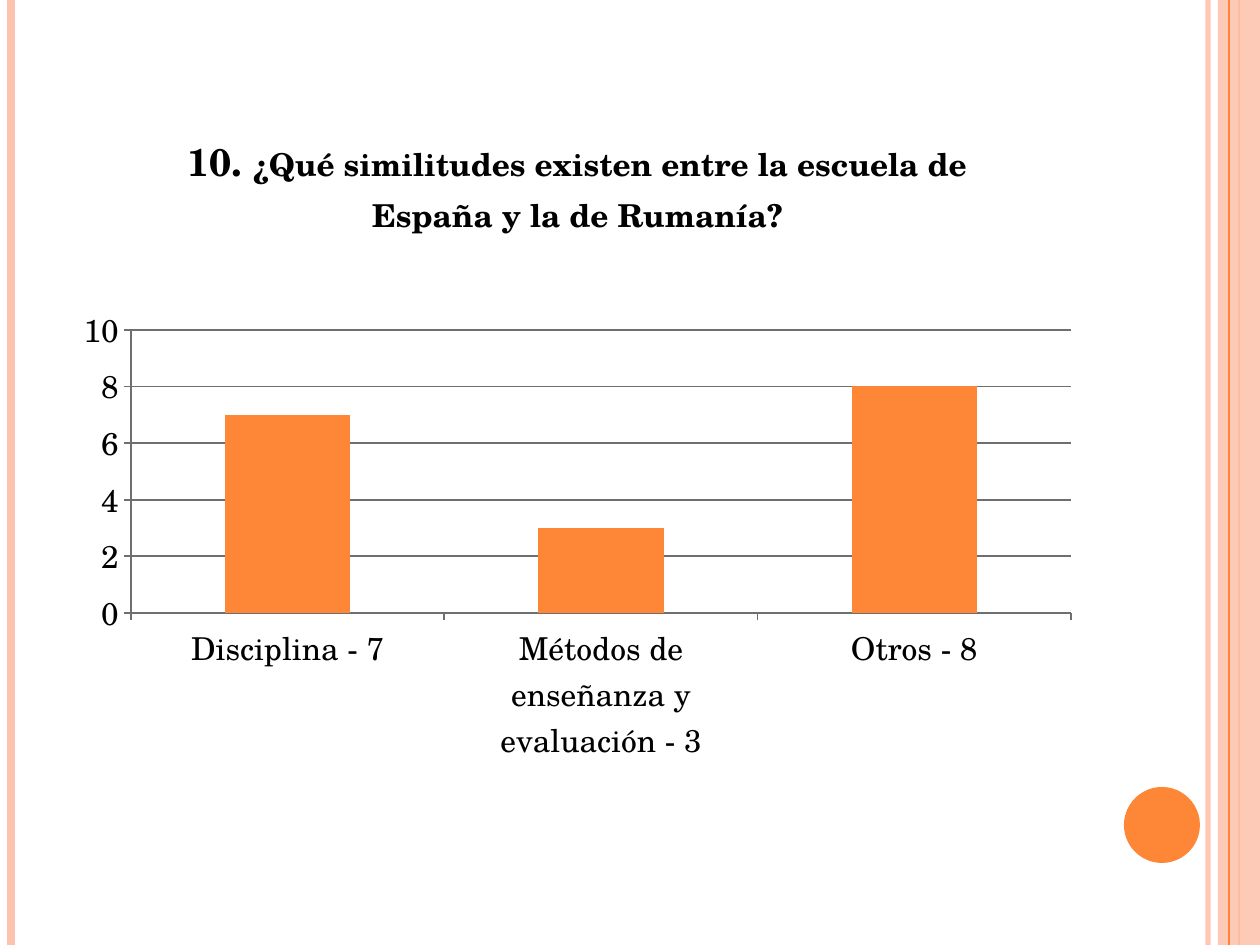
from typing import NamedTuple

from lxml.etree import SubElement
from pptx import Presentation
from pptx.chart.data import CategoryChartData
from pptx.dml.color import RGBColor
from pptx.enum.chart import XL_CHART_TYPE as ChartType, XL_TICK_MARK as Tick
from pptx.enum.shapes import MSO_CONNECTOR as Connector, MSO_SHAPE as Shape
from pptx.oxml import parse_xml
from pptx.oxml.ns import nsdecls, qn
from pptx.util import Emu, Pt

PX_PER_INCH = 126
WIDTH, HEIGHT = 1260, 945
FONT = "TeX Gyre Schola"
ORANGE, PEACH, BLACK, GRAY = "FE8637", "FEC3AE", "000000", "6F6F6F"


class Stripe(NamedTuple):
    x: int
    color: str
    weight: float
    opacity: int = 100


class Block(NamedTuple):
    kind: Shape
    x: int
    y: int
    width: int
    height: int
    color: str
    opacity: int = 100


class Box(NamedTuple):
    x: int
    y: int
    width: int
    height: int


def px(length: int) -> Emu:
    return Emu(round(length * 914400 / PX_PER_INCH))


def rgb(color: str) -> RGBColor:
    return RGBColor.from_string(color)


def set_opacity(properties, percent: int) -> None:
    if percent < 100:
        tint = next(properties.iter(qn("a:srgbClr")))
        SubElement(tint, qn("a:alpha")).set("val", str(percent * 1000))


def draw_stripe(slide, stripe: Stripe) -> None:
    line = slide.shapes.add_connector(
        Connector.STRAIGHT, px(stripe.x), 0, px(stripe.x), px(HEIGHT))
    line.line.color.rgb = rgb(stripe.color)
    line.line.width = Pt(stripe.weight)
    properties = line._element.spPr
    set_opacity(properties, stripe.opacity)
    SubElement(properties, qn("a:effectLst"))


def draw_block(slide, block: Block) -> None:
    shape = slide.shapes.add_shape(block.kind, *map(px, block[1:5]))
    shape.shadow.inherit = False
    shape.fill.solid()
    shape.fill.fore_color.rgb = rgb(block.color)
    shape.line.fill.background()
    set_opacity(shape._element.spPr, block.opacity)


def format_font(font, size: float, bold: bool = False, color: str = BLACK) -> None:
    font.name, font.size, font.bold = FONT, Pt(size), bold
    font.color.rgb = rgb(color)


def write(paragraph, text: str, **style) -> None:
    run = paragraph.add_run()
    run.text = text
    format_font(run.font, **style)


def place_plot(chart, frame: Box, plot: Box) -> None:
    """Fix the inner plot area as fractions of the chart frame."""
    shares = {
        "x": (plot.x - frame.x) / frame.width,
        "y": (plot.y - frame.y) / frame.height,
        "w": plot.width / frame.width,
        "h": plot.height / frame.height,
    }
    modes = '<c:layoutTarget val="inner"/><c:xMode val="edge"/><c:yMode val="edge"/>'
    values = "".join(f'<c:{side} val="{share:.4f}"/>' for side, share in shares.items())
    area = chart._chartSpace.chart.plotArea
    for layout in area.findall(qn("c:layout")):
        area.remove(layout)
    area.insert(0, parse_xml(
        f'<c:layout {nsdecls("c")}><c:manualLayout>{modes}{values}'
        "</c:manualLayout></c:layout>"))


def draw_answers(slide, frame: Box, plot: Box) -> None:
    answers = CategoryChartData()
    answers.categories = [
        "Disciplina - 7", "Métodos de enseñanza y evaluación - 3", "Otros - 8"]
    answers.add_series("Series 1", (7, 3, 8))
    chart = slide.shapes.add_chart(
        ChartType.COLUMN_CLUSTERED, *map(px, frame), answers).chart
    format_font(chart.font, size=18)
    chart.has_legend = False

    # Question as the chart title
    chart.has_title = True
    question = chart.chart_title.text_frame.paragraphs[0]
    write(question, "10. ", size=22, bold=True)
    write(question, "¿Qué similitudes existen entre la escuela de España "
          "y la de Rumanía?", size=18, bold=True)
    chart.chart_title.include_in_layout = False

    # Columns
    columns = chart.plots[0]
    columns.gap_width = 150
    columns.vary_by_categories = False
    fill = columns.series[0].format.fill
    fill.solid()
    fill.fore_color.rgb = rgb(ORANGE)

    # Axes and gridlines
    scale = chart.value_axis
    scale.minimum_scale, scale.maximum_scale, scale.major_unit = 0, 10, 2
    scale.has_major_gridlines = True
    for axis in (chart.category_axis, scale):
        axis.major_tick_mark, axis.minor_tick_mark = Tick.OUTSIDE, Tick.NONE
        format_font(axis.tick_labels.font, size=18)
    for ruled in (chart.category_axis, scale, scale.major_gridlines):
        ruled.format.line.color.rgb = rgb(GRAY)
        ruled.format.line.width = Pt(1)
    place_plot(chart, frame, plot)


def main() -> None:
    deck = Presentation()
    deck.slide_width, deck.slide_height = px(WIDTH), px(HEIGHT)
    slide = deck.slides.add_slide(deck.slide_layouts[6])

    # Side decoration, back to front
    for stripe in (Stripe(1208, PEACH, 3, 93), Stripe(11, PEACH, 4.5),
                   Stripe(1239, ORANGE, 1.5)):
        draw_stripe(slide, stripe)
    draw_block(slide, Block(Shape.RECTANGLE, 1218, 0, 42, HEIGHT, PEACH, 87))
    draw_stripe(slide, Stripe(1229, ORANGE, 0.75))
    draw_block(slide, Block(Shape.OVAL, 1124, 787, 76, 76, ORANGE))

    # Survey chart
    draw_answers(slide, Box(63, 105, 1029, 672), Box(131, 330, 940, 283))
    deck.save("out.pptx")


if __name__ == "__main__":
    main()
